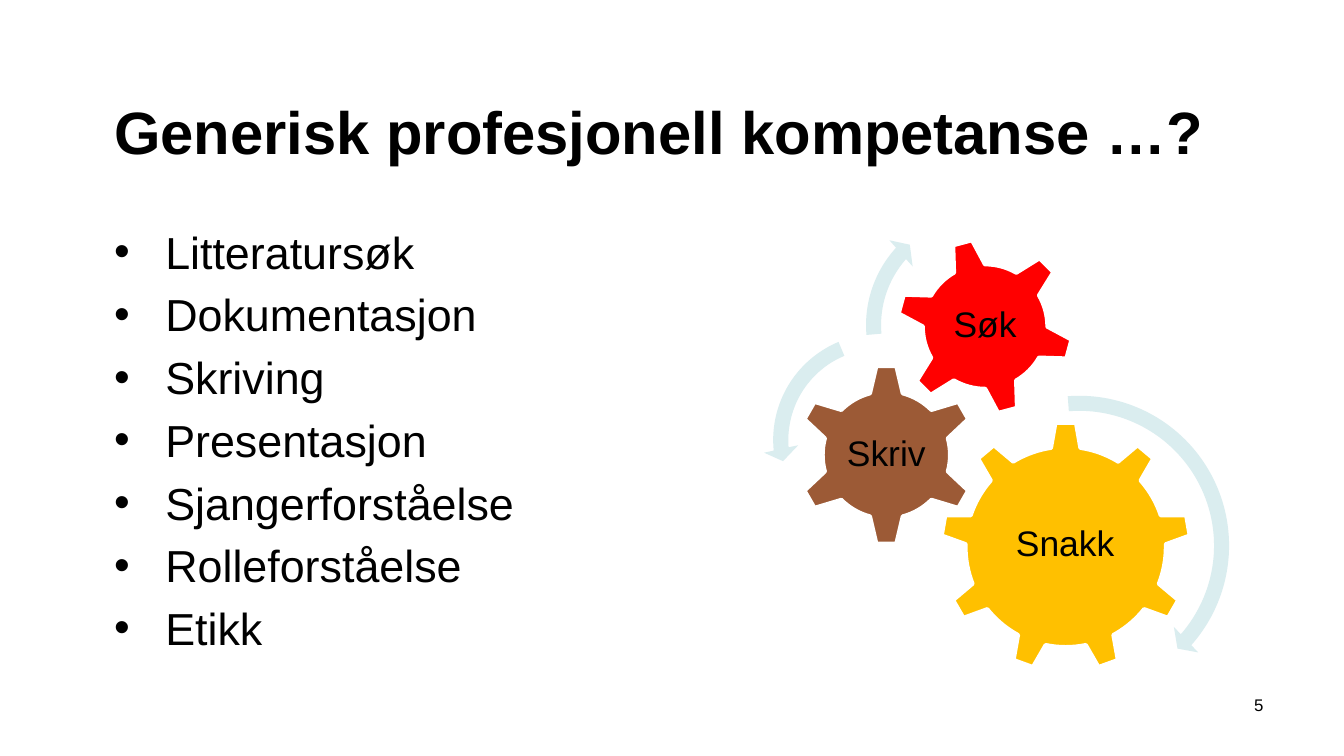
from pptx import Presentation
from pptx.dml.color import RGBColor
from pptx.enum.shapes import MSO_SHAPE
from pptx.enum.text import MSO_ANCHOR, MSO_AUTO_SIZE, PP_ALIGN
from pptx.util import Inches, Pt
from lxml import etree

GEAR6, GEAR9 = MSO_SHAPE.GEAR_6, MSO_SHAPE.GEAR_9
RIGHT_ARC, LEFT_ARC = MSO_SHAPE.CIRCULAR_ARROW, MSO_SHAPE.LEFT_CIRCULAR_ARROW
MIDDLE, TOP = MSO_ANCHOR.MIDDLE, MSO_ANCHOR.TOP
LEFT, CENTER, RIGHT = PP_ALIGN.LEFT, PP_ALIGN.CENTER, PP_ALIGN.RIGHT
NO_FIT = MSO_AUTO_SIZE.NONE
DRAW = "{http://schemas.openxmlformats.org/drawingml/2006/main}"

COLORS = {"text": "000000", "edge": "FFFFFF", "talk": "FFC000",
          "write": "9C5A36", "search": "FF0000", "arc": "DAEDEF"}
TOPICS = ["Litteratursøk", "Dokumentasjon", "Skriving", "Presentasjon",
          "Sjangerforståelse", "Rolleforståelse", "Etikk"]


def style(box, place, size, align, anchor=TOP, bold=False):
    """Place a text holder and format all its paragraphs."""
    box.left, box.top, box.width, box.height = map(Inches, place)
    frame = box.text_frame
    frame.word_wrap = True
    frame.auto_size = NO_FIT
    frame.vertical_anchor = anchor
    for para in frame.paragraphs:
        para.alignment = align
        for run in para.runs:
            font = run.font
            font.name, font.size, font.bold = "Arial", Pt(size), bold
            font.color.rgb = RGBColor.from_string(COLORS["text"])


def add_shape(kind, left, top, size, color):
    """Add a square shape with a plain fill and no outline."""
    shape = slide.shapes.add_shape(
        kind, Inches(left), Inches(top), Inches(size), Inches(size))
    shape.shadow.inherit = False
    shape.fill.solid()
    shape.fill.fore_color.rgb = RGBColor.from_string(COLORS[color])
    shape.line.fill.background()
    return shape


deck = Presentation()
deck.slide_width = Inches(10)
deck.slide_height = Inches(10) * 9 // 16
slide = deck.slides.add_slide(deck.slide_layouts[1])

title, body = slide.placeholders
title.text_frame.text = "Generisk profesjonell kompetanse …?"
style(title, (0.75, 0.5, 8.5, 0.94), 32, LEFT, MIDDLE, bold=True)

body.text_frame.text = "\n".join(TOPICS)
style(body, (0.75, 1.62, 4.17, 3.38), 24, LEFT)
for i, para in enumerate(body.text_frame.paragraphs):
    para.space_before = Pt(4.8 if i else 0)
    props = para._p.get_or_add_pPr()
    props.set("marL", str(Inches(0.38)))
    props.set("indent", str(-Inches(0.38)))
    etree.SubElement(props, DRAW + "buFont", typeface="Arial")
    etree.SubElement(props, DRAW + "buChar", char="•")

# Gear: kind, left, top, size, turn, color, label, label place
gears = [
    (GEAR9, 7, 3.14, 1.86, 0, "talk", "Snakk", (7.37, 3.58, 1.11, 0.95)),
    (GEAR6, 5.92, 2.71, 1.35, 0, "write", "Skriv", (6.26, 3.05, 0.67, 0.67)),
    (GEAR6, 6.67, 1.77, 1.32, 345, "search", "Søk", (6.96, 2.06, 0.74, 0.74)),
]
for kind, left, top, size, turn, color, word, place in gears:
    gear = add_shape(kind, left, top, size, color)
    gear.rotation = turn
    gear.line.color.rgb = RGBColor.from_string(COLORS["edge"])
    gear.line.width = Pt(2)

    label = slide.shapes.add_textbox(0, 0, 0, 0)
    frame = label.text_frame
    frame.text = word
    frame.margin_left = frame.margin_right = Inches(0.03)
    frame.margin_top = frame.margin_bottom = Inches(0.03)
    frame.paragraphs[0].line_spacing = 0.9
    style(label, place, 19, CENTER, MIDDLE)

# Arc: kind, left, top, size, adjustments
arcs = [
    (RIGHT_ARC, 6.84, 2.87, 2.38, (0.047, 2.99, 24.82, 159.36, 0.055)),
    (LEFT_ARC, 5.68, 2.41, 1.73, (0.065, 4.3, 104.89, 148.38, 0.075)),
    (RIGHT_ARC, 6.37, 1.49, 1.86, (0.06, 3.94, 133.14, 105.08, 0.07)),
]
for kind, left, top, size, values in arcs:
    arc = add_shape(kind, left, top, size, "arc")
    for i, value in enumerate(values):
        arc.adjustments[i] = value

number = slide.shapes.add_textbox(0, 0, 0, 0)
number.text_frame.text = "5"
style(number, (8.75, 5.12, 0.75, 0.38), 9, RIGHT)

deck.save("out.pptx")
